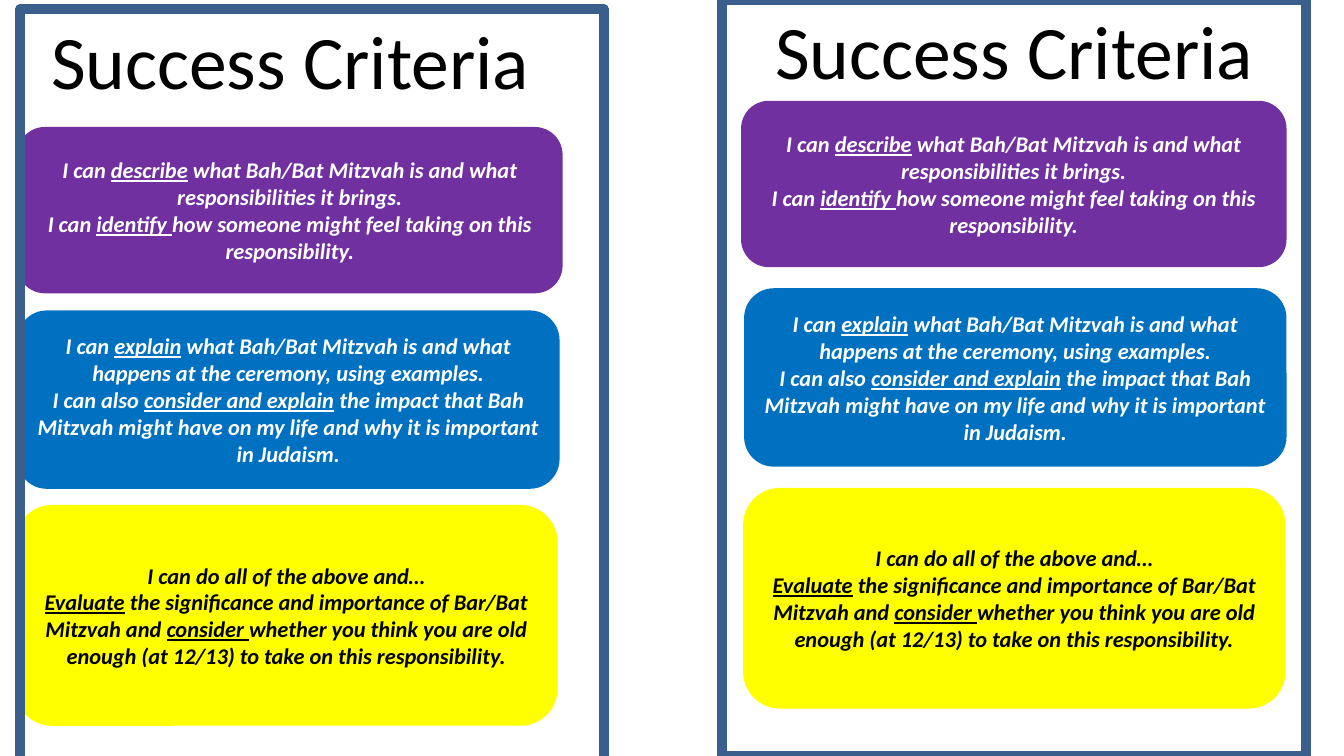
from pptx import Presentation
from pptx.dml.color import RGBColor
from pptx.enum.shapes import MSO_SHAPE
from pptx.enum.text import MSO_ANCHOR, MSO_AUTO_SIZE, PP_ALIGN
from pptx.util import Emu, Pt

RECTANGLE = MSO_SHAPE.RECTANGLE
ROUNDED = MSO_SHAPE.ROUNDED_RECTANGLE
MIDDLE = MSO_ANCHOR.MIDDLE
FIT_SHAPE = MSO_AUTO_SIZE.SHAPE_TO_FIT_TEXT
CENTER = PP_ALIGN.CENTER

EMU_PER_PX = 9144  # 100 px to the inch
COLOURS = {
    "purple": "7030A0",
    "blue": "0070C0",
    "yellow": "FFFF00",
    "frame": "3A5F8C",
    "white": "FFFFFF",
    "black": "000000",
}

# Underscores enclose underlined words.
# Each level: fill, text colour, (width, height), paragraphs
LEVELS = [
    ("purple", "white", (541, 165), [
        "I can _describe_ what Bah/Bat Mitzvah is and what responsibilities it brings.",
        "I can _identify _how someone might feel taking on this responsibility.",
    ]),
    ("blue", "white", (538, 177), [
        "I can _explain_ what Bah/Bat Mitzvah is and what happens at the ceremony, "
        "using examples.",
        "I can also _consider and explain_ the impact that Bah Mitzvah might have "
        "on my life and why it is important in Judaism.",
    ]),
    ("yellow", "black", (538, 219), [
        "I can do all of the above and…",
        "_Evaluate_ the significance and importance of Bar/Bat Mitzvah and "
        "_consider _whether you think you are old enough (at 12/13) to take on "
        "this responsibility.",
    ]),
]
LEFT_CORNERS = [(17, 126), (17, 308), (15, 501)]
RIGHT_CORNERS = [(735, 100), (738, 286), (737, 484)]


def px(length):
    return Emu(length * EMU_PER_PX)


def colour(name):
    return RGBColor.from_string(COLOURS[name])


class CriteriaSlide:
    font_name = "Calibri"
    title_size = Pt(54)
    criteria_size = Pt(16)
    frame_width = Pt(7)

    def __init__(self, presentation):
        self.slide = presentation.slides.add_slide(presentation.slide_layouts[6])

    def style_paragraph(self, paragraph, size, colour_name, emphasis=False):
        paragraph.alignment = CENTER
        font = paragraph.font
        font.name = self.font_name
        font.size = size
        font.bold = font.italic = emphasis
        font.color.rgb = colour(colour_name)

    def title(self, left, top):
        box = self.slide.shapes.add_textbox(px(left), px(top), px(500), px(101))
        box.text_frame.word_wrap = False
        box.text_frame.auto_size = FIT_SHAPE
        paragraph = box.text_frame.paragraphs[0]
        paragraph.add_run().text = "Success Criteria"
        self.style_paragraph(paragraph, self.title_size, "black")

    def frame(self, left, top):
        shape = self.slide.shapes.add_shape(
            RECTANGLE, px(left), px(top), px(579), px(750))
        shape.shadow.inherit = False
        shape.fill.background()
        shape.line.color.rgb = colour("frame")
        shape.line.width = self.frame_width

    def card(self, corner, fill, text_colour, size, texts):
        shape = self.slide.shapes.add_shape(
            ROUNDED, *[px(length) for length in corner + size])
        shape.shadow.inherit = False
        shape.fill.solid()
        shape.fill.fore_color.rgb = colour(fill)
        shape.line.fill.background()
        text_frame = shape.text_frame
        text_frame.word_wrap = True
        text_frame.vertical_anchor = MIDDLE
        for index, text in enumerate(texts):
            paragraph = text_frame.add_paragraph() if index else text_frame.paragraphs[0]
            self.style_paragraph(paragraph, self.criteria_size, text_colour, emphasis=True)
            for position, part in enumerate(text.split("_")):
                if part:
                    run = paragraph.add_run()
                    run.text = part
                    if position % 2:
                        run.font.underline = True

    def cards(self, corners):
        for corner, level in zip(corners, LEVELS):
            self.card(corner, *level)


def main():
    presentation = Presentation()
    presentation.slide_width = px(1333)
    presentation.slide_height = px(750)
    criteria = CriteriaSlide(presentation)

    # The left frame overlaps its cards; the right one lies behind them.
    criteria.cards(LEFT_CORNERS)
    criteria.title(38, 9)
    criteria.frame(20, 9)

    criteria.frame(716, 0)
    criteria.title(756, -1)
    criteria.cards(RIGHT_CORNERS)

    presentation.save("out.pptx")


if __name__ == "__main__":
    main()
